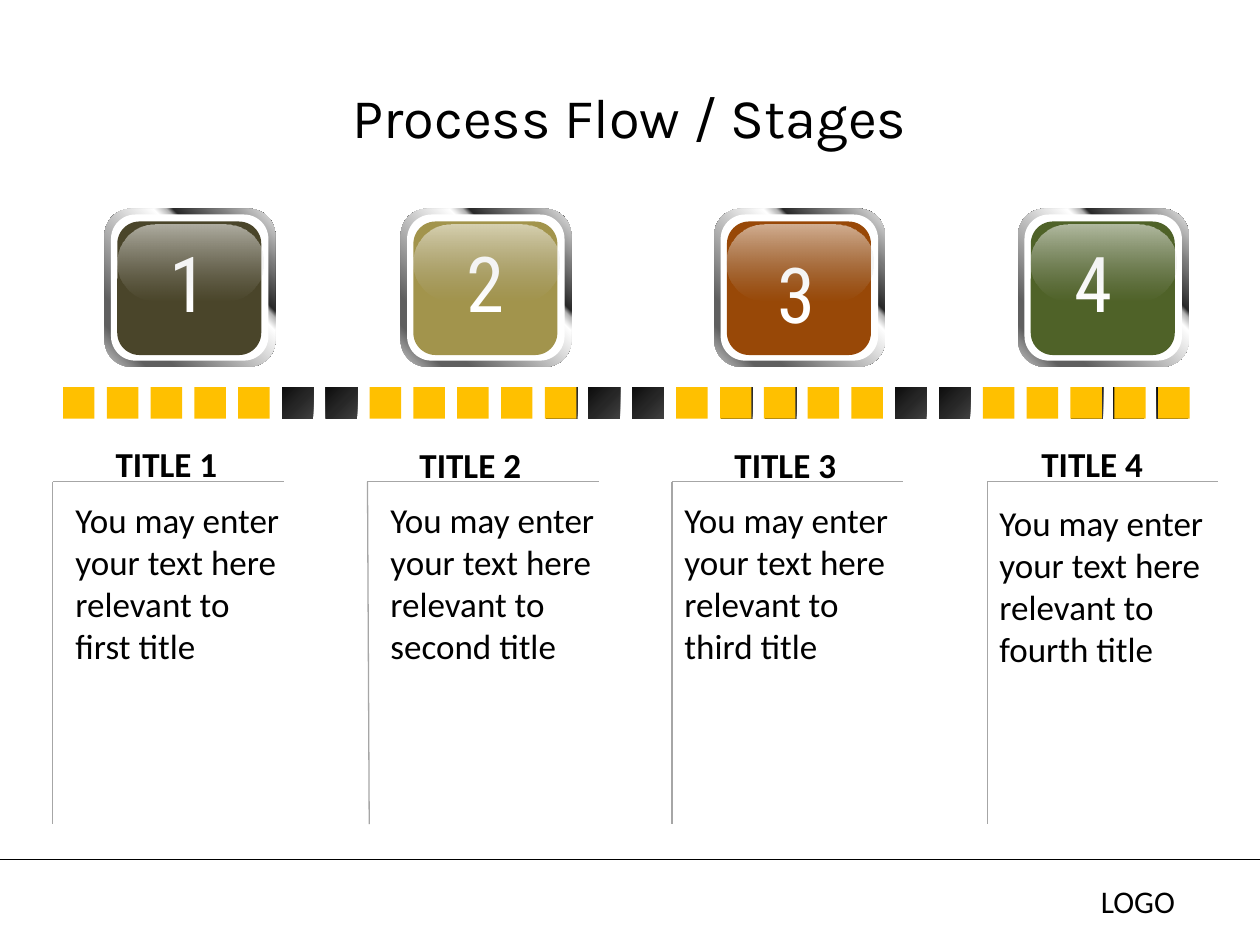
from pptx import Presentation
from pptx.dml.color import RGBColor as RGB
from pptx.enum.shapes import MSO_CONNECTOR as Conn, MSO_SHAPE as Kind
from pptx.enum.text import MSO_ANCHOR as Anchor, MSO_AUTO_SIZE as Fit, PP_ALIGN as Align
from pptx.oxml import parse_xml
from pptx.oxml.ns import nsdecls, qn
from pptx.util import Pt
from lxml.etree import SubElement

HEX = {"ink": "000000", "white": "FFFFFF", "rule": "A6A6A6", "gold": "FFC000"}

# Gradients: stops of (percent, colour, opacity), then the angle
DARK = ([(0, "404040", 100), (50, "262626", 100), (100, "0D0D0D", 100)], 225)
CHROME = ([(0, "CBCBCB", 100), (13, "5F5F5F", 100), (21, "5F5F5F", 100),
           (63, "FFFFFF", 100), (67, "B2B2B2", 100), (69, "292929", 100),
           (82, "777777", 100), (100, "EAEAEA", 100)], 315)
GLOSS = ([(0, "FFFFFF", 56), (100, "B6B6B6", 0)], 90)

# Badges: number, left, colour, number's left, top and width
BADGES = [
    ("1", 59.8, "4A452A", 90, 131, 32),
    ("2", 229, "A2944C", 259.2, 131, 37),
    ("3", 408.2, "984807", 437, 137.5, 38),
    ("4", 581.8, "4F6228", 607, 131, 38),
]

# Columns: rule's left, its foot, heading's left and top, text's left and top, word
COLS = [
    (30.2, 30.2, 59, 249.1, 36, 281.5, "first"),
    (210, 211, 232.6, 249.8, 216, 281.5, "second"),
    (384, 384, 412.6, 249.8, 384, 281.5, "third"),
    (564.2, 564.2, 588, 249.1, 564, 283.2, "fourth"),
]

# Dark squares of the band, with the shift that lets an edge show
NUDGE = {5: 0, 6: 0, 11: 0.7, 12: 0, 13: 0, 15: 0.7, 16: 0.7,
         19: 0, 20: 0, 23: 0.7, 24: -0.7, 25: -0.7}
BARE = {5, 6, 12, 13, 19, 20}
COUNT, STEP = 26, 25.03


def shade(shape, grad):
    stops, angle = grad
    marks = "".join(
        f'<a:gs pos="{pos * 1000}"><a:srgbClr val="{tone}">'
        f'<a:alpha val="{alpha * 1000}"/></a:srgbClr></a:gs>'
        for pos, tone, alpha in stops)
    fill = parse_xml(
        f'<a:gradFill {nsdecls("a")} rotWithShape="1"><a:gsLst>{marks}</a:gsLst>'
        f'<a:lin ang="{angle * 60000}" scaled="0"/></a:gradFill>')
    shape.fill.background()
    props = shape._element.spPr
    props.replace(props.find(qn("a:noFill")), fill)


def box(parts, kind, x, y, w, h, fill):
    shape = parts.add_shape(kind, Pt(x), Pt(y), Pt(w), Pt(h))
    shape.shadow.inherit = False
    shape.line.fill.background()
    if isinstance(fill, tuple):
        shade(shape, fill)
    else:
        shape.fill.solid()
        shape.fill.fore_color.rgb = RGB.from_string(fill)
    return shape


def rule(parts, x1, y1, x2, y2, tone):
    line = parts.add_connector(Conn.STRAIGHT, Pt(x1), Pt(y1), Pt(x2), Pt(y2))
    line.line.color.rgb = RGB.from_string(tone)
    line.line.width = Pt(0.75)
    SubElement(line._element.spPr, qn("a:effectLst"))


def style(frame, size, face="Calibri", tone=HEX["ink"], bold=False):
    for run in frame.paragraphs[0].runs:
        font = run.font
        font.size, font.name, font.bold = Pt(size), face, bold
        font.color.rgb = RGB.from_string(tone)


def label(parts, text, x, y, w, h, size, wrap=True, **look):
    frame = parts.add_textbox(Pt(x), Pt(y), Pt(w), Pt(h)).text_frame
    frame.text = text
    frame.word_wrap = wrap
    frame.auto_size = Fit.SHAPE_TO_FIT_TEXT
    style(frame, size, **look)


def title(slide):
    head = slide.shapes.title
    head.left, head.top, head.width, head.height = Pt(36), Pt(21.6), Pt(648), Pt(90)
    frame = head.text_frame
    frame.text = "Process Flow / Stages"
    frame.vertical_anchor = Anchor.MIDDLE
    frame.paragraphs[0].alignment = Align.CENTER
    style(frame, 32, "Karla")


def footer(parts):
    rule(parts, 0, 491, 720, 491, HEX["ink"])
    label(parts, "LOGO", 622, 500.4, 80, 29, 18)


def band(parts):
    spots = [(i, nudge, DARK) for i, nudge in NUDGE.items()]
    spots += [(i, 0, HEX["gold"]) for i in range(COUNT) if i not in BARE]
    for i, nudge, fill in spots:
        box(parts, Kind.RECTANGLE, 36 + i * STEP + nudge, 221.2, 18, 18, fill)


def column(parts, num, left, foot, hx, hy, tx, ty, word):
    rule(parts, left, 275.2, left + 132, 275.2, HEX["rule"])
    rule(parts, left, 275.2, foot, 471, HEX["rule"])
    label(parts, f"TITLE {num}", hx, hy, 73.4, 31.5, 20, wrap=False, bold=True)
    label(parts, f"You may enter your text here relevant to {word} title",
          tx, ty, 132, 104.4, 20)


def badge(parts, num, x, tone, nx, ny, nw):
    # Chrome rim, white ring, coloured face
    for dx, y, w, h, fill in [(0, 119.3, 97.5, 90.3, CHROME),
                              (3.6, 122.6, 90, 83.5, HEX["white"]),
                              (7.2, 126.6, 82.3, 76.3, tone)]:
        box(parts, Kind.ROUNDED_RECTANGLE, x + dx, y, w, h, fill)
    label(parts, num, nx, ny, nw, 60.5, 44, wrap=False,
          face="Roboto Condensed", tone=HEX["white"])
    # Gloss over the number
    sheen = box(parts, Kind.ROUNDED_RECTANGLE, x + 7.2, 128.6, 83.5, 43.2, GLOSS)
    sheen.adjustments[0] = 0.5


def main():
    deck = Presentation()
    deck.slide_width, deck.slide_height = Pt(720), Pt(540)
    slide = deck.slides.add_slide(deck.slide_layouts[5])
    shapes = slide.shapes
    title(slide)
    footer(shapes)
    band(shapes.add_group_shape().shapes)
    for num, col in enumerate(COLS, 1):
        column(shapes.add_group_shape().shapes, num, *col)
    for item in BADGES:
        badge(shapes.add_group_shape().shapes, *item)
    deck.save("out.pptx")


if __name__ == "__main__":
    main()
